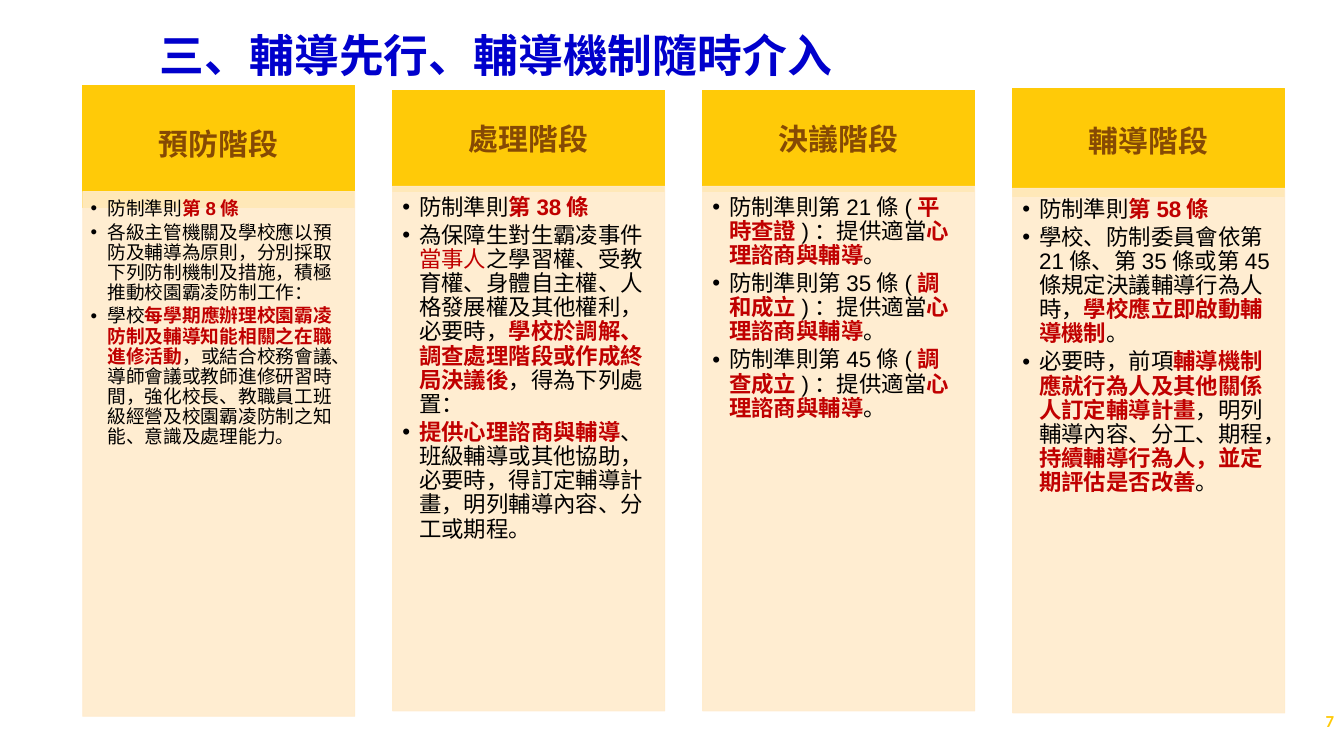
from dataclasses import dataclass

from lxml.etree import SubElement
from pptx import Presentation
from pptx.dml.color import RGBColor
from pptx.enum.shapes import MSO_SHAPE
from pptx.enum.text import MSO_ANCHOR, MSO_AUTO_SIZE, PP_ALIGN
from pptx.oxml.ns import qn
from pptx.util import Inches, Pt

COLORS = {
    "title": "0000CC",
    "gold": "FFCA08",
    "cream": "FFECCC",
    "heading": "864A04",
    "text": "000000",
    "accent": "C00000",
}
SLIDE_WIDTH, SLIDE_HEIGHT = 20, 11.25

# Column grid, in inches
FIRST_LEFT, COLUMN_PITCH, COLUMN_WIDTH = 1.23, 4.613, 4.05
LIST_HEIGHT = 7.81


@dataclass(frozen=True)
class Stage:
    heading: str
    top: float
    heading_height: float
    list_top: float
    points: tuple[str, ...]  # *bold accent*, ~plain accent~
    size: int = 24


STAGES = (
    Stage("預防階段", 1.27, 1.81, 2.85, (
        "防制準則*第8條*",
        "各級主管機關及學校應以預防及輔導為原則，分別採取下列防制機制及措施，積極推動校園霸凌防制工作：",
        "學校*每學期應辦理校園霸凌防制及輔導知能相關之在職進修活動*，或結合校務會議、導師會議或教師進修研習時間，"
        "強化校長、教職員工班級經營及校園霸凌防制之知能、意識及處理能力。",
    ), size=20),
    Stage("處理階段", 1.34, 1.51, 2.77, (
        "防制準則*第38條*",
        "為保障生對生霸凌事件~當事人~之學習權、受教育權、身體自主權、人格發展權及其他權利，必要時，"
        "*學校於調解、調查處理階段或作成終局決議後*，得為下列處置：",
        "*提供心理諮商與輔導*、班級輔導或其他協助，必要時，得訂定輔導計畫，明列輔導內容、分工或期程。",
    )),
    Stage("決議階段", 1.34, 1.51, 2.77, tuple(
        f"防制準則第{article}條(*{outcome}*)：提供適當*心理諮商與輔導*。"
        for article, outcome in ((21, "平時查證"), (35, "調和成立"), (45, "調查成立"))
    )),
    Stage("輔導階段", 1.32, 1.61, 2.8, (
        "防制準則*第58條*",
        "學校、防制委員會依第21條、第35條或第45條規定決議輔導行為人時，*學校應立即啟動輔導機制*。",
        "必要時，前項*輔導機制應就行為人及其他關係人訂定輔導計畫*，明列輔導內容、分工、期程，"
        "*持續輔導行為人，並定期評估是否改善*。",
    )),
)


def rgb(name: str) -> RGBColor:
    return RGBColor.from_string(COLORS[name])


def set_font(font, size: float, color: str, name: str = "Arial") -> None:
    font.name, font.size, font.bold = name, Pt(size), True
    font.color.rgb = rgb(color)


def place(shape, left: float, top: float, width: float, height: float) -> None:
    shape.left, shape.top = Inches(left), Inches(top)
    shape.width, shape.height = Inches(width), Inches(height)


def set_margins(frame, left: float, top: float, right: float, bottom: float) -> None:
    frame.margin_left, frame.margin_top = Inches(left), Inches(top)
    frame.margin_right, frame.margin_bottom = Inches(right), Inches(bottom)
    frame.word_wrap = True


def add_panel(slide, left: float, top: float, height: float, color: str):
    panel = slide.shapes.add_shape(
        MSO_SHAPE.RECTANGLE, Inches(left), Inches(top), Inches(COLUMN_WIDTH), Inches(height))
    panel.shadow.inherit = False
    panel.fill.solid()
    panel.fill.fore_color.rgb = rgb(color)
    panel.line.color.rgb = rgb(color)
    panel.line.width = Pt(0.85)
    return panel


def set_opacity(shape, percent: int) -> None:
    for color in shape._element.spPr.iter(qn("a:srgbClr")):
        SubElement(color, qn("a:alpha"), val=str(percent * 1000))


def add_bullet(paragraph) -> None:
    properties = paragraph._p.get_or_add_pPr()
    properties.set("marL", str(Inches(0.25)))
    properties.set("indent", str(-Inches(0.25)))
    bullet_color = SubElement(properties, qn("a:buClr"))
    SubElement(bullet_color, qn("a:srgbClr"), val=COLORS["text"])
    SubElement(properties, qn("a:buFont"), typeface="Arial")
    SubElement(properties, qn("a:buChar"), char="•")


def write_point(paragraph, point: str, size: int) -> None:
    paragraph.alignment = PP_ALIGN.LEFT
    paragraph.line_spacing = 0.9
    paragraph.space_after = Pt(0.17 * size)
    add_bullet(paragraph)
    paragraph.font.name, paragraph.font.size = "Arial", Pt(size)
    for i, piece in enumerate(point.split("*")):
        for j, words in enumerate(piece.split("~")):
            if words:
                run = paragraph.add_run()
                run.text = words
                run.font.bold = i % 2 == 1
                run.font.color.rgb = rgb("accent" if i % 2 or j % 2 else "text")


def add_stage(slide, stage: Stage, column: int) -> None:
    left = FIRST_LEFT + column * COLUMN_PITCH

    # Heading
    heading = add_panel(slide, left, stage.top, stage.heading_height, "gold")
    frame = heading.text_frame
    set_margins(frame, 0.25, 0.14, 0.25, 0.14)
    frame.vertical_anchor = MSO_ANCHOR.MIDDLE
    paragraph = frame.paragraphs[0]
    paragraph.text = stage.heading
    paragraph.alignment = PP_ALIGN.CENTER
    paragraph.line_spacing = 0.9
    set_font(paragraph.font, 32, "heading")

    # List, slightly see-through over the heading's lower edge
    panel = add_panel(slide, left, stage.list_top, LIST_HEIGHT, "cream")
    set_opacity(panel, 90)
    frame = panel.text_frame
    frame.vertical_anchor = MSO_ANCHOR.TOP
    set_margins(frame, *(share * stage.size for share in (0.006, 0.006, 0.008, 0.0086)))
    for number, point in enumerate(stage.points):
        paragraph = frame.add_paragraph() if number else frame.paragraphs[0]
        write_point(paragraph, point, stage.size)


def main() -> None:
    deck = Presentation()
    deck.slide_width, deck.slide_height = Inches(SLIDE_WIDTH), Inches(SLIDE_HEIGHT)
    slide = deck.slides.add_slide(deck.slide_layouts[5])

    # Title
    title = slide.shapes.title
    place(title, 2.28, 0.11, 17.17, 1.42)
    title.text_frame.auto_size = MSO_AUTO_SIZE.NONE
    title.text_frame.vertical_anchor = MSO_ANCHOR.MIDDLE
    paragraph = title.text_frame.paragraphs[0]
    paragraph.text = "三、輔導先行、輔導機制隨時介入"
    paragraph.alignment = PP_ALIGN.LEFT
    set_font(paragraph.font, 48, "title")

    # Stages
    for column, stage in enumerate(STAGES):
        add_stage(slide, stage, column)

    # Page number
    page_number = slide.shapes.add_textbox(0, 0, 0, 0)
    place(page_number, 17.44, 10.43, 2.51, 0.6)
    page_number.text_frame.word_wrap = True
    page_number.text_frame.vertical_anchor = MSO_ANCHOR.MIDDLE
    paragraph = page_number.text_frame.paragraphs[0]
    paragraph.text = "7"
    paragraph.alignment = PP_ALIGN.RIGHT
    set_font(paragraph.font, 18, "gold", "Calibri")

    deck.save("out.pptx")


if __name__ == "__main__":
    main()
